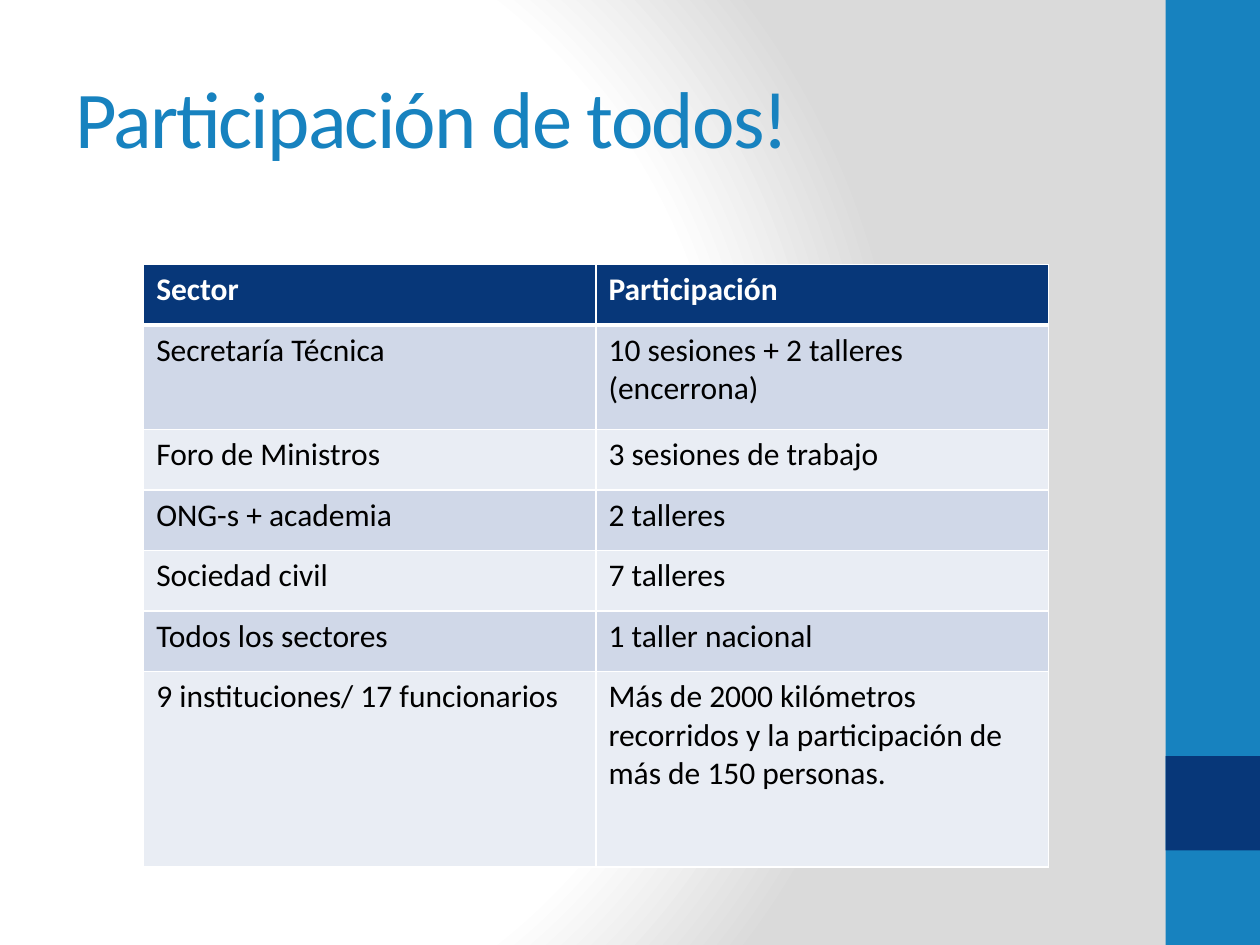
from lxml import etree
from pptx import Presentation, util as u
from pptx.dml.color import RGBColor
from pptx.enum import shapes, text
from pptx.oxml import parse_xml
from pptx.oxml.ns import nsdecls, qn

HUE = {"blue": "1782BF", "navy": "073779", "odd": "D0D8E8", "even": "E9EDF4",
       "white": "FFFFFF", "gray": "DADADA", "black": "000000"}
FONT = "Calibri"
ROWS = [
    (0.48, "Sector", "Participación"),
    (0.83, "Secretaría Técnica", "10 sesiones + 2 talleres (encerrona)"),
    (0.48, "Foro de Ministros", "3 sesiones de trabajo"),
    (0.48, "ONG-s + academia", "2 talleres"),
    (0.48, "Sociedad civil", "7 talleres"),
    (0.48, "Todos los sectores", "1 taller nacional"),
    (1.55, "9 instituciones/ 17 funcionarios",
     "Más de 2000 kilómetros recorridos y la participación de más de 150 personas."),
]


def style(para, size, hue, bold=False):
    font = para.font
    font.name, font.size, font.bold = FONT, u.Pt(size), bold
    font.color.rgb = RGBColor.from_string(HUE[hue])


def edge(cell, side, width):
    """Add a white border; call in the order L, R, T, B before filling."""
    line = etree.SubElement(cell._tc.get_or_add_tcPr(), qn(f"a:ln{side}"),
                            w=str(u.Pt(width)))
    fill = etree.SubElement(line, qn("a:solidFill"))
    etree.SubElement(fill, qn("a:srgbClr"), val=HUE["white"])


deck = Presentation()
deck.slide_width, deck.slide_height = u.Inches(10), u.Inches(7.5)
wide, high = deck.slide_width, deck.slide_height
slide = deck.slides.add_slide(deck.slide_layouts[6])

# Background: round glow from the left
stops = "".join(f'<a:gs pos="{pos}000"><a:srgbClr val="{HUE[hue]}"/></a:gs>'
                for pos, hue in [(0, "white"), (75, "white"), (100, "gray")])
slide.element.cSld.insert(0, parse_xml(
    f'<p:bg {nsdecls("p", "a")}><p:bgPr><a:gradFill rotWithShape="1">'
    f'<a:gsLst>{stops}</a:gsLst><a:path path="circle">'
    '<a:fillToRect l="20000" t="50000" r="100000" b="50000"/></a:path>'
    '</a:gradFill><a:effectLst/></p:bgPr></p:bg>'))

# Side band with its darker square
side = int(wide * 0.075)
for top, tall, hue in [(0, high, "blue"), (int(high * 0.8), side, "navy")]:
    band = slide.shapes.add_shape(shapes.MSO_SHAPE.RECTANGLE,
                                  wide - side, top, side, tall)
    band.shadow.inherit = False
    band.fill.solid()
    band.fill.fore_color.rgb = RGBColor.from_string(HUE[hue])
    band.line.fill.background()

# Title
title = slide.shapes.add_textbox(int(wide * 0.05), int(high * 0.04),
                                 u.Inches(8.33), u.Inches(1.25))
frame = title.text_frame
frame.word_wrap = True
frame.vertical_anchor = text.MSO_ANCHOR.MIDDLE
para = frame.paragraphs[0]
run = para.add_run()
run.text = "Participación de todos!"
style(para, 46, "blue")
run.font._element.set("spc", "-100")

# Table of sectors
table = slide.shapes.add_table(len(ROWS), 2, u.Inches(1.14), u.Inches(2.1),
                               u.Inches(7.17), u.Inches(4.8)).table
for col in table.columns:
    col.width = u.Inches(3.59)
for r, (tall, *words) in enumerate(ROWS):
    table.rows[r].height = u.Inches(tall)
    head = r == 0
    for c, word in enumerate(words):
        cell = table.cell(r, c)
        cell.text = word
        style(cell.text_frame.paragraphs[0], 18, "white" if head else "black", head)
        for name, width in [("L", 1), ("R", 1), ("T", 3 if r == 1 else 1),
                            ("B", 3 if head else 1)]:
            edge(cell, name, width)
        cell.fill.solid()
        tint = "navy" if head else "odd" if r % 2 else "even"
        cell.fill.fore_color.rgb = RGBColor.from_string(HUE[tint])

deck.save("out.pptx")
